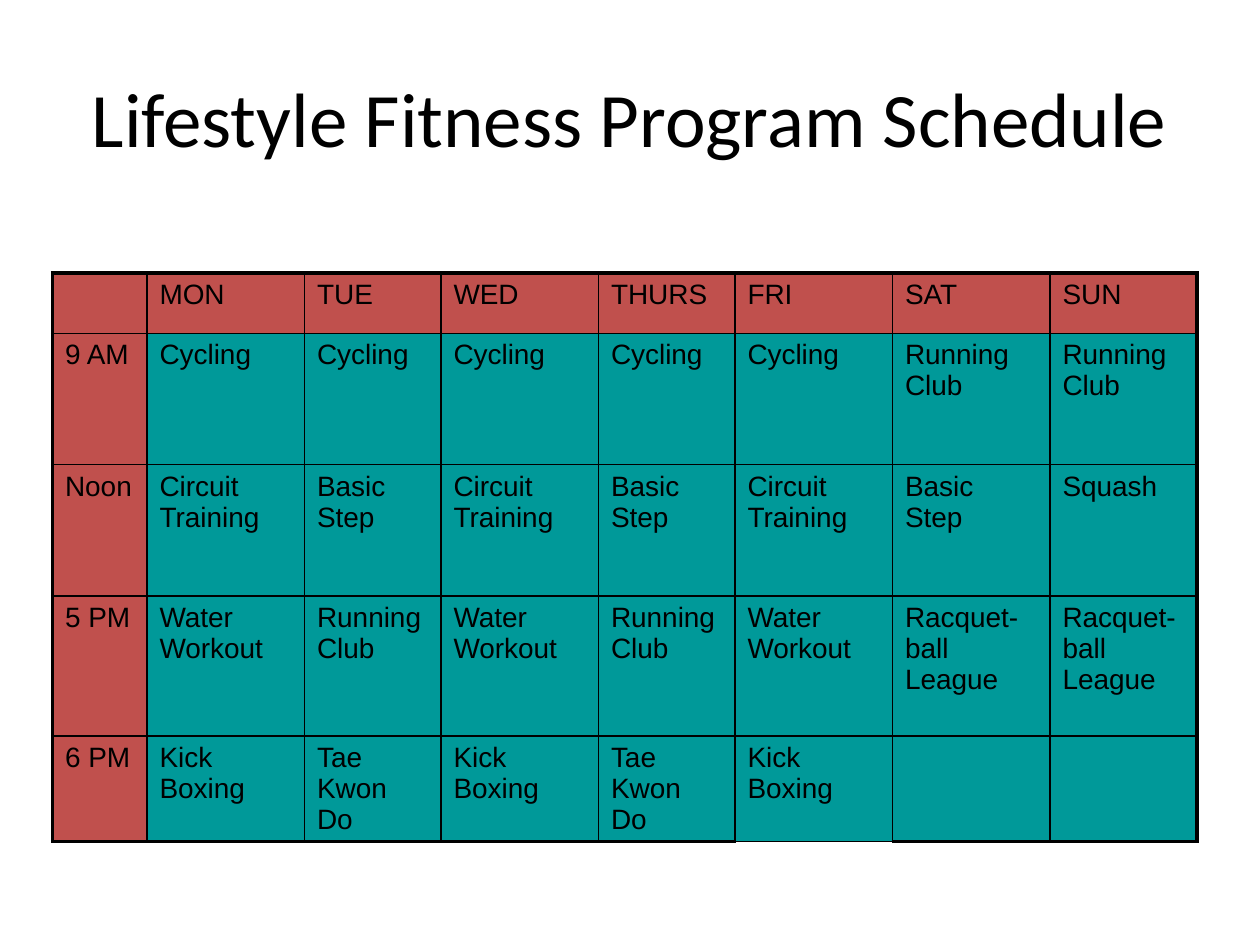
from dataclasses import dataclass

from lxml.etree import SubElement
from pptx import Presentation
from pptx.dml.color import RGBColor
from pptx.enum.text import MSO_ANCHOR, PP_ALIGN
from pptx.oxml.ns import qn
from pptx.util import Pt


@dataclass(frozen=True)
class Theme:
    ink: str = "000000"
    heading_fill: str = "C0504D"
    class_fill: str = "009999"
    title_font: str = "Calibri"
    table_font: str = "Arial"
    title_size: float = 44
    table_size: float = 16
    inner_border: float = 1
    outer_border: float = 2.25


THEME = Theme()

COLUMN_WIDTHS = [54, 90, 78, 90, 78, 90, 90, 84]
ROW_HEIGHTS = [34.5, 75, 75, 80, 52]
SCHEDULE = [
    ["", "MON", "TUE", "WED", "THURS", "FRI", "SAT", "SUN"],
    ["9 AM"] + ["Cycling"] * 5 + ["Running Club"] * 2,
    ["Noon"] + ["Circuit Training", "Basic Step"] * 3 + ["Squash"],
    ["5 PM"] + ["Water Workout", "Running Club"] * 2
    + ["Water Workout"] + ["Racquet-ball League"] * 2,
    ["6 PM"] + ["Kick Boxing", "Tae Kwon Do"] * 2 + ["Kick Boxing", "", ""],
]
LAST_ROW = len(ROW_HEIGHTS) - 1
LAST_COLUMN = len(COLUMN_WIDTHS) - 1
# The Friday 6 PM cell keeps a thin lower edge
THIN_BOTTOM_COLUMN = 5


def write_text(frame, text, *, font, size, align, anchor, color=THEME.ink):
    frame.word_wrap = True
    frame.vertical_anchor = anchor
    paragraph = frame.paragraphs[0]
    paragraph.alignment = align
    run = paragraph.add_run()
    run.text = text
    run.font.name = font
    run.font.size = Pt(size)
    run.font.color.rgb = RGBColor.from_string(color)


def set_borders(cell, widths):
    """Draw the left, right, top and bottom edges, placed before the fill."""
    properties = cell._tc.get_or_add_tcPr()
    for position, (side, width) in enumerate(widths.items()):
        edge = SubElement(properties, qn(f"a:ln{side}"), w=str(Pt(width)))
        fill = SubElement(edge, qn("a:solidFill"))
        SubElement(fill, qn("a:srgbClr"), val=THEME.ink)
        properties.insert(position, edge)


def border_widths(row, column):
    def width(is_outer):
        return THEME.outer_border if is_outer else THEME.inner_border

    return {
        "L": width(column == 0),
        "R": width(column == LAST_COLUMN),
        "T": width(row == 0),
        "B": width(row == LAST_ROW and column != THIN_BOTTOM_COLUMN),
    }


def add_title(slide, text):
    title = slide.shapes.title
    title.left, title.top = Pt(36), Pt(21.6)
    title.width, title.height = Pt(648), Pt(90)
    write_text(title.text_frame, text, font=THEME.title_font,
               size=THEME.title_size, align=PP_ALIGN.CENTER,
               anchor=MSO_ANCHOR.MIDDLE)


def add_schedule(slide):
    schedule = slide.shapes.add_table(
        len(ROW_HEIGHTS), len(COLUMN_WIDTHS), Pt(30), Pt(156),
        Pt(sum(COLUMN_WIDTHS)), Pt(sum(ROW_HEIGHTS))).table
    schedule.first_row = False
    schedule.horz_banding = False
    for column, width in zip(schedule.columns, COLUMN_WIDTHS):
        column.width = Pt(width)
    for row, height in zip(schedule.rows, ROW_HEIGHTS):
        row.height = Pt(height)

    for row, entries in enumerate(SCHEDULE):
        for column, entry in enumerate(entries):
            cell = schedule.cell(row, column)
            is_heading = row == 0 or column == 0
            cell.fill.solid()
            cell.fill.fore_color.rgb = RGBColor.from_string(
                THEME.heading_fill if is_heading else THEME.class_fill)
            set_borders(cell, border_widths(row, column))
            if entry:
                write_text(cell.text_frame, entry, font=THEME.table_font,
                           size=THEME.table_size, align=PP_ALIGN.LEFT,
                           anchor=MSO_ANCHOR.TOP)


def main():
    deck = Presentation()
    deck.slide_width, deck.slide_height = Pt(720), Pt(540)
    slide = deck.slides.add_slide(deck.slide_layouts[5])

    # Heading
    add_title(slide, "Lifestyle Fitness Program Schedule")

    # Weekly timetable
    add_schedule(slide)

    deck.save("out.pptx")


if __name__ == "__main__":
    main()
